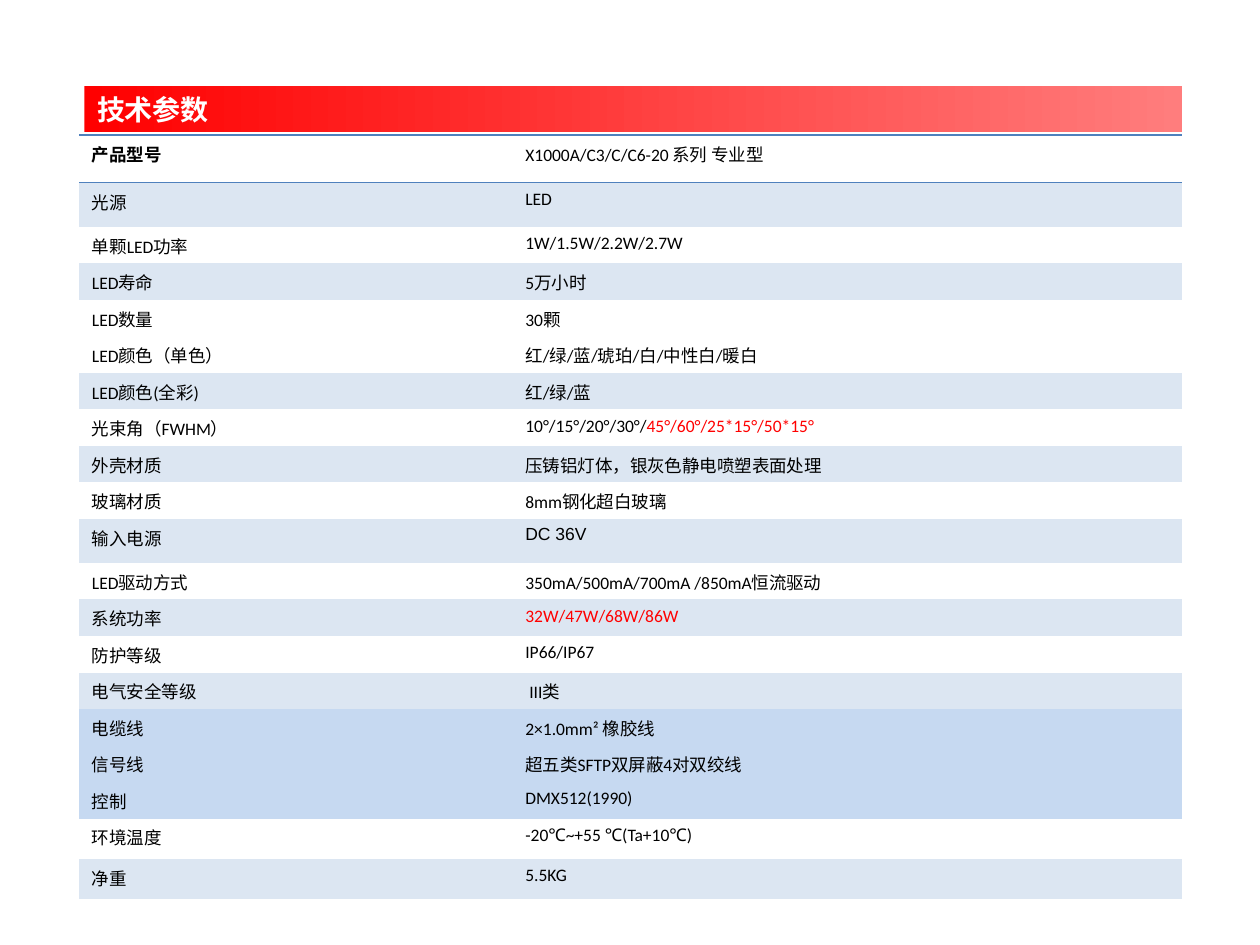
from dataclasses import dataclass

from lxml import etree
from pptx import Presentation
from pptx.dml.color import RGBColor
from pptx.enum.text import MSO_ANCHOR, MSO_AUTO_SIZE, PP_ALIGN
from pptx.oxml.ns import qn
from pptx.util import Inches, Pt

LEFT = PP_ALIGN.LEFT
MIDDLE = MSO_ANCHOR.MIDDLE
NO_AUTOFIT = MSO_AUTO_SIZE.NONE
PLAIN_TABLE = "{2D5ABB26-0587-4C30-8999-92F81FD0307C}"


@dataclass(frozen=True)
class Theme:
    latin: str = "Calibri"
    cjk: str = "Noto Sans CJK SC"
    sans: str = "Arial"
    title_size: int = 16
    body_size: int = 10
    white: str = "FFFFFF"
    black: str = "000000"
    red: str = "FF0000"
    pale_red: str = "FF7D7D"
    rule: str = "4F81BD"
    band: str = "DCE6F2"
    cable: str = "C6D9F1"


T = Theme()
ROW, TALL, LAST, HEAD = 0.29, 0.35, 0.32, 0.38  # row heights in inches

# Label, value (text after "|" is red), fill, row height
SPECS = [
    ("产品型号", "X1000A/C3/C/C6-20 系列 专业型", None, HEAD),
    ("光源", "LED", T.band, TALL),
    ("单颗LED功率", "1W/1.5W/2.2W/2.7W", None, ROW),
    ("LED寿命", "5万小时", T.band, ROW),
    ("LED数量", "30颗", None, ROW),
    ("LED颜色（单色）", "红/绿/蓝/琥珀/白/中性白/暖白", None, ROW),
    ("LED颜色(全彩)", "红/绿/蓝", T.band, ROW),
    ("光束角（FWHM）", "10°/15°/20°/30°/|45°/60°/25*15°/50*15°", None, ROW),
    ("外壳材质", "压铸铝灯体，银灰色静电喷塑表面处理", T.band, ROW),
    ("玻璃材质", "8mm钢化超白玻璃", None, ROW),
    ("输入电源", "DC 36V", T.band, TALL),
    ("LED驱动方式", "350mA/500mA/700mA /850mA恒流驱动", None, ROW),
    ("系统功率", "|32W/47W/68W/86W", T.band, ROW),
    ("防护等级", "IP66/IP67", None, ROW),
    ("电气安全等级", " III类", T.band, ROW),
    ("电缆线", "2×1.0mm² 橡胶线", T.cable, ROW),
    ("信号线", "超五类SFTP双屏蔽4对双绞线", T.cable, ROW),
    ("控制", "DMX512(1990)", T.cable, ROW),
    ("环境温度", "-20℃~+55 ℃(Ta+10℃)", None, LAST),
    ("净重", "5.5KG", T.band, LAST),
]
FONTS = {"玻璃材质": T.cjk, "DC 36V": T.sans}


def rgb(color):
    return RGBColor.from_string(color)


def style_run(r, font, size, color, bold=False):
    r.font.name = font
    r.font.size = Pt(size)
    r.font.bold = bold
    r.font.color.rgb = rgb(color)
    ea = etree.Element(qn("a:ea"), typeface=T.cjk)
    r.font._element.find(qn("a:latin")).addnext(ea)


def add_rules(cell, sides):
    """Draw 1 pt lines on the given sides, ahead of the cell's fill."""
    tc_pr = cell._tc.get_or_add_tcPr()
    for i, side in enumerate(sides):
        ln = etree.Element(qn(f"a:ln{side}"), w=str(Pt(1)))
        fill = etree.SubElement(ln, qn("a:solidFill"))
        etree.SubElement(fill, qn("a:srgbClr"), val=T.rule)
        tc_pr.insert(i, ln)


def title_bar(slide, box):
    sp = slide.shapes.title
    sp.left, sp.top, sp.width, sp.height = map(Inches, box)
    sp.fill.gradient()
    sp.fill.gradient_angle = 0
    for stop, color in zip(sp.fill.gradient_stops, (T.red, T.pale_red)):
        stop.color.rgb = rgb(color)
    tf = sp.text_frame
    tf.text = "技术参数"
    tf.auto_size = NO_AUTOFIT
    tf.vertical_anchor = MIDDLE
    p = tf.paragraphs[0]
    p.alignment = LEFT
    style_run(p.runs[0], T.cjk, T.title_size, T.white, True)


def fill_cell(cell, text, color, bold):
    cell.margin_bottom = Inches(0.03)  # lets one line fit the row height
    p = cell.text_frame.paragraphs[0]
    for part, ink in zip(text.split("|"), (T.black, T.red)):
        if part:
            r = p.add_run()
            r.text = part
            style_run(r, FONTS.get(part, T.latin), T.body_size, ink, bold)
    if color:
        cell.fill.solid()
        cell.fill.fore_color.rgb = rgb(color)
    else:
        cell.fill.background()


def spec_table(slide, box, label_width):
    x, y, w, h = map(Inches, box)
    table = slide.shapes.add_table(len(SPECS), 2, x, y, w, h).table
    table._tbl.tblPr.find(qn("a:tableStyleId")).text = PLAIN_TABLE
    table.first_row = table.horz_banding = False
    table.columns[0].width = Inches(label_width)
    table.columns[1].width = w - Inches(label_width)
    for i, (label, value, color, height) in enumerate(SPECS):
        table.rows[i].height = Inches(height)
        fill_cell(table.cell(i, 0), label, color, i == 0)
        fill_cell(table.cell(i, 1), value, color, False)
    # Lines above and below the model row
    for col in range(2):
        add_rules(table.cell(0, col), "TB")


def main():
    prs = Presentation()
    prs.slide_width, prs.slide_height = Inches(10), Inches(7.5)
    slide = prs.slides.add_slide(prs.slide_layouts[5])
    title_bar(slide, (0.67, 0.68, 8.71, 0.37))
    spec_table(slide, (0.63, 1.07, 8.75, 6.06), 3.44)
    prs.save("out.pptx")


if __name__ == "__main__":
    main()
